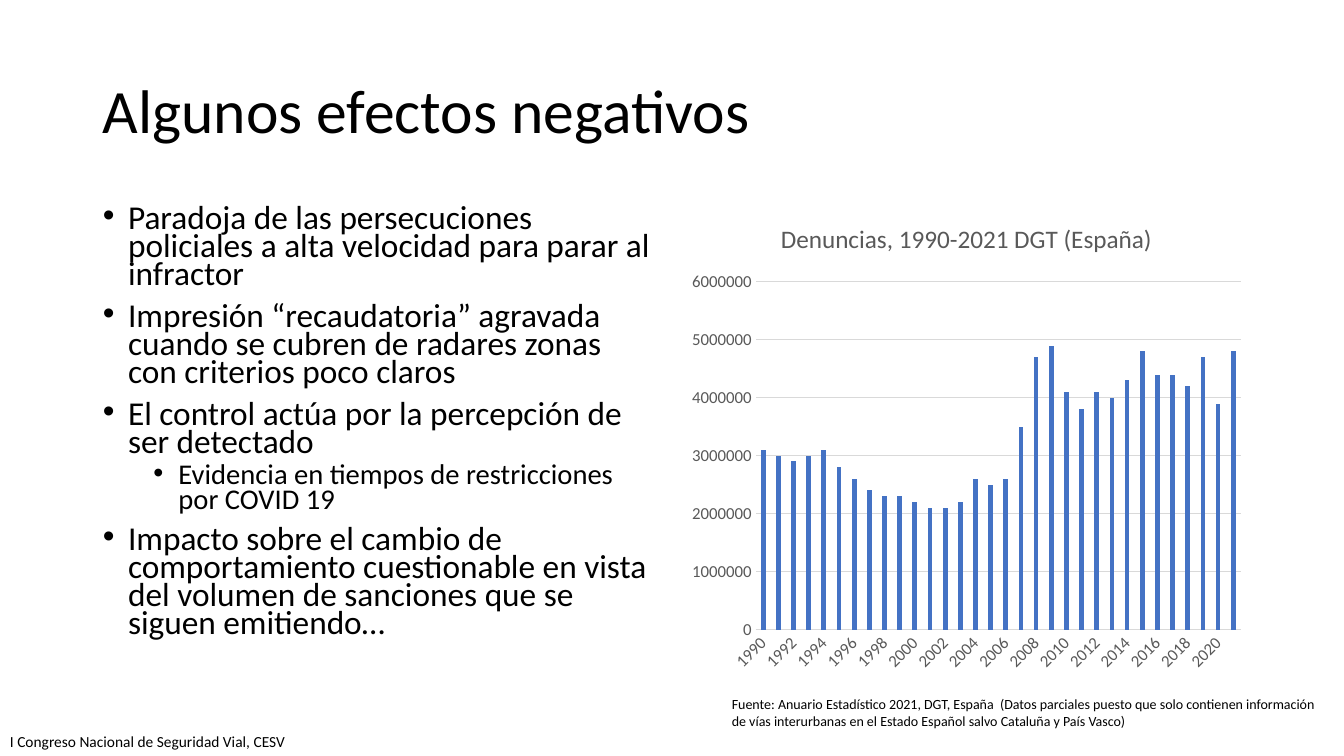
import pptx
import pptx.chart.data
import pptx.dml.color
import pptx.enum.chart
import pptx.enum.text
import pptx.oxml
import pptx.oxml.ns
import pptx.util

EMU_PER_PX = 9144  # 100 px to the inch
BLACK, GREY, GRID, BLUE = "000000", "595959", "D9D9D9", "4472C4"

BULLETS = [  # level, text
    (0, "Paradoja de las persecuciones policiales a alta velocidad para parar al infractor"),
    (0, "Impresión “recaudatoria” agravada cuando se cubren de radares zonas con criterios poco claros"),
    (0, "El control actúa por la percepción de ser detectado"),
    (1, "Evidencia en tiempos de restricciones por COVID 19"),
    (0, "Impacto sobre el cambio de comportamiento cuestionable en vista del volumen "
        "de sanciones que se siguen emitiendo…"),
]
LEVELS = [(23.8, 10, 25), (20.4, 5, 75)]  # size, space before, margin px

FIRST_YEAR = 1990
REPORTS_MILLIONS = [
    3.1, 3.0, 2.9, 3.0, 3.1, 2.8, 2.6, 2.4, 2.3, 2.3, 2.2, 2.1, 2.1, 2.2, 2.6, 2.5,
    2.6, 3.5, 4.7, 4.9, 4.1, 3.8, 4.1, 4.0, 4.3, 4.8, 4.4, 4.4, 4.2, 4.7, 3.9, 4.8,
]


def px(length):
    return pptx.util.Emu(length * EMU_PER_PX)


def colour(value):
    return pptx.dml.color.RGBColor.from_string(value)


class SlideBuilder:
    font = "Calibri"

    def __init__(self, slide):
        self.slide = slide

    def style(self, font, size, value=BLACK):
        font.name = self.font
        font.size = pptx.util.Pt(size)
        font.bold = False
        font.color.rgb = colour(value)

    def run(self, paragraph, text, size, value=BLACK):
        run = paragraph.add_run()
        run.text = text
        self.style(run.font, size, value)

    def place(self, shape, box):
        shape.left, shape.top, shape.width, shape.height = map(px, box)
        shape.text_frame.auto_size = pptx.enum.text.MSO_AUTO_SIZE.NONE

    def title(self, text, box):
        shape = self.slide.shapes.title
        self.place(shape, box)
        shape.text_frame.vertical_anchor = pptx.enum.text.MSO_ANCHOR.MIDDLE
        paragraph = shape.text_frame.paragraphs[0]
        paragraph.alignment = pptx.enum.text.PP_ALIGN.LEFT
        paragraph.line_spacing = 0.9
        self.run(paragraph, text, 44)

    def bullets(self, items, box):
        shape = self.slide.placeholders[1]
        self.place(shape, box)
        for index, (level, text) in enumerate(items):
            frame = shape.text_frame
            paragraph = frame.add_paragraph() if index else frame.paragraphs[0]
            size, before, margin = LEVELS[level]
            paragraph.level = level
            paragraph.line_spacing = 0.7
            paragraph.space_before = pptx.util.Pt(before)
            paragraph.space_after = pptx.util.Pt(0)
            self.run(paragraph, text, size)
            # Hanging bullet
            properties = paragraph._p.get_or_add_pPr()
            properties.set("marL", str(px(margin)))
            properties.set("indent", str(px(-25)))
            namespace = pptx.oxml.ns.nsdecls("a")
            for bullet in ('buFont %s typeface="Arial"', 'buChar %s char="•"'):
                properties.append(pptx.oxml.parse_xml(f"<a:{bullet % namespace}/>"))

    def text(self, text, box, size, wrap):
        shape = self.slide.shapes.add_textbox(*map(px, box))
        shape.text_frame.word_wrap = wrap
        shape.text_frame.auto_size = pptx.enum.text.MSO_AUTO_SIZE.SHAPE_TO_FIT_TEXT
        self.run(shape.text_frame.paragraphs[0], text, size)

    def axis(self, axis):
        axis.major_tick_mark = axis.minor_tick_mark = pptx.enum.chart.XL_TICK_MARK.NONE
        self.style(axis.tick_labels.font, 12, GREY)

    def line(self, line):
        line.color.rgb = colour(GRID)
        line.width = pptx.util.Pt(0.75)

    def column_chart(self, title, name, categories, values, box):
        data = pptx.chart.data.CategoryChartData()
        data.categories = categories
        data.add_series(name, values)
        kind = pptx.enum.chart.XL_CHART_TYPE.COLUMN_CLUSTERED
        chart = self.slide.shapes.add_chart(kind, *map(px, box), data).chart
        self.style(chart.font, 10)
        chart.has_legend = False
        chart.has_title = True
        chart.chart_title.include_in_layout = False
        self.run(chart.chart_title.text_frame.paragraphs[0], title, 18, GREY)

        # Columns
        plot = chart.plots[0]
        plot.vary_by_categories = False
        plot.gap_width, plot.overlap = 219, -27
        fill = plot.series[0].format.fill
        fill.solid()
        fill.fore_color.rgb = colour(BLUE)

        # Axes, with slanted years
        years, amounts = chart.category_axis, chart.value_axis
        self.axis(years)
        self.axis(amounts)
        self.line(years.format.line)
        years._element.txPr.bodyPr.set("rot", str(-45 * 60000))
        amounts.minimum_scale, amounts.maximum_scale = 0, 6000000
        amounts.major_unit = 1000000
        amounts.format.line.fill.background()
        self.line(amounts.major_gridlines.format.line)


def main():
    presentation = pptx.Presentation()
    presentation.slide_width, presentation.slide_height = px(1333), px(750)
    slide = presentation.slides.add_slide(presentation.slide_layouts[1])
    builder = SlideBuilder(slide)

    # Title and arguments
    builder.title("Algunos efectos negativos", (92, 40, 1150, 145))
    builder.bullets(BULLETS, (92, 200, 567, 476))

    # Event footer
    builder.text("I Congreso Nacional de Seguridad Vial, CESV", (0, 721, 295, 29), 11, False)

    # Yearly reports and their source
    years = [str(FIRST_YEAR + index) for index in range(len(REPORTS_MILLIONS))]
    reports = [round(value * 1000000) for value in REPORTS_MILLIONS]
    builder.column_chart("Denuncias, 1990-2021 DGT (España)", "Denuncias", years, reports,
                         (675, 200, 567, 476))
    builder.text("Fuente: Anuario Estadístico 2021, DGT, España  (Datos parciales puesto que solo "
                 "contienen información de vías interurbanas en el Estado Español salvo Cataluña "
                 "y País Vasco)", (716, 685, 609, 61), 10, True)

    presentation.save("out.pptx")


if __name__ == "__main__":
    main()
